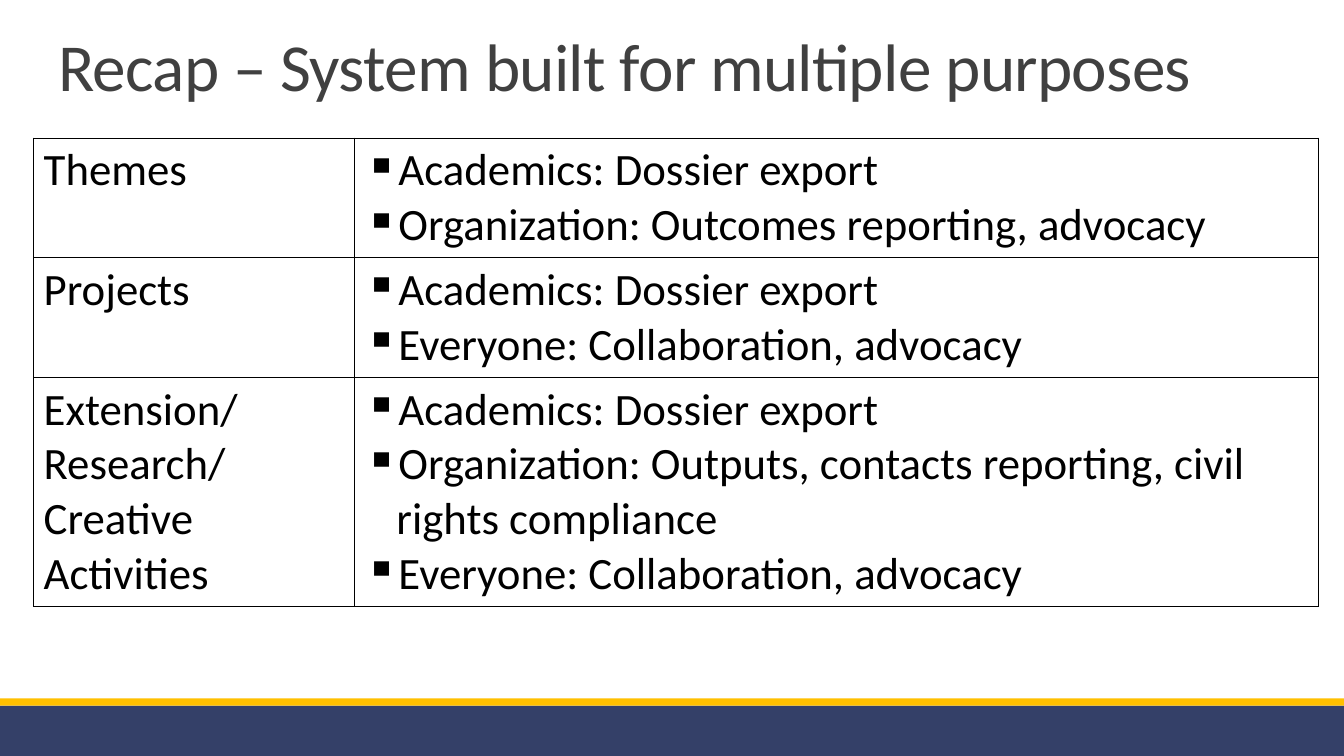
from lxml.etree import SubElement
from pptx import Presentation
from pptx.dml.color import RGBColor
from pptx.enum.shapes import MSO_SHAPE
from pptx.enum.text import MSO_ANCHOR
from pptx.oxml.ns import qn
from pptx.util import Pt

BLACK = RGBColor(0x00, 0x00, 0x00)
GREY = RGBColor(0x40, 0x40, 0x40)
NAVY = RGBColor(0x34, 0x40, 0x68)
GOLD = RGBColor(0xFF, 0xC0, 0x00)

PURPOSES = [
    ("Themes", ["Academics: Dossier export",
                "Organization: Outcomes reporting, advocacy"]),
    ("Projects", ["Academics: Dossier export",
                  "Everyone: Collaboration, advocacy"]),
    ("Extension/ Research/ Creative Activities",
     ["Academics: Dossier export",
      "Organization: Outputs, contacts reporting, civil rights compliance",
      "Everyone: Collaboration, advocacy"]),
]


class SlideBuilder:
    font_name = "Calibri"
    title_size = 48
    table_size = 32
    bullet_indent = 22.5

    def __init__(self, slide):
        self.slide = slide

    def set_font(self, paragraph, size, color):
        paragraph.font.name = self.font_name
        paragraph.font.size = Pt(size)
        paragraph.font.color.rgb = color

    def band(self, top, height, color):
        shape = self.slide.shapes.add_shape(
            MSO_SHAPE.RECTANGLE, Pt(0), Pt(top), Pt(960), Pt(height))
        shape.shadow.inherit = False
        shape.fill.solid()
        shape.fill.fore_color.rgb = color
        shape.line.fill.background()

    def title(self, text, left, top, width, height):
        frame = self.slide.shapes.add_textbox(
            Pt(left), Pt(top), Pt(width), Pt(height)).text_frame
        frame.word_wrap = True
        frame.vertical_anchor = MSO_ANCHOR.TOP
        paragraph = frame.paragraphs[0]
        paragraph.line_spacing = 0.85
        run = paragraph.add_run()
        run.text = text
        self.set_font(paragraph, self.title_size, GREY)
        # Letter spacing in hundredths of a point
        run.font._element.set("spc", "-50")

    def bullet(self, paragraph):
        properties = paragraph._p.get_or_add_pPr()
        indent = Pt(self.bullet_indent)
        properties.set("marL", str(indent))
        properties.set("indent", str(-indent))
        mark = SubElement(properties, qn("a:buChar"))
        mark.set("char", "▪")
        # The bullet goes before the default run properties
        properties.insert(0, mark)

    def cell(self, cell, lines, bulleted):
        frame = cell.text_frame
        frame.text = "\n".join(lines)
        for paragraph in frame.paragraphs:
            self.set_font(paragraph, self.table_size, BLACK)
            if bulleted:
                self.bullet(paragraph)
        # Borders come before the fill in the cell properties
        properties = cell._tc.get_or_add_tcPr()
        for side in ("a:lnL", "a:lnR", "a:lnT", "a:lnB"):
            border = SubElement(properties, qn(side), w=str(Pt(1)))
            fill = SubElement(border, qn("a:solidFill"))
            SubElement(fill, qn("a:srgbClr"), val=str(BLACK))
        cell.fill.background()

    def table(self, rows, left, top, column_widths, row_heights):
        table = self.slide.shapes.add_table(
            len(rows), len(column_widths), Pt(left), Pt(top),
            Pt(sum(column_widths)), Pt(sum(row_heights))).table
        table.first_row = False
        table.horz_banding = False
        for column, width in zip(table.columns, column_widths):
            column.width = Pt(width)
        for index, (label, bullets) in enumerate(rows):
            table.rows[index].height = Pt(row_heights[index])
            self.cell(table.cell(index, 0), [label], bulleted=False)
            self.cell(table.cell(index, 1), bullets, bulleted=True)


def main():
    presentation = Presentation()
    presentation.slide_width = Pt(960)
    presentation.slide_height = Pt(540)
    slide = presentation.slides.add_slide(presentation.slide_layouts[6])
    builder = SlideBuilder(slide)

    # Footer bands
    builder.band(504, 36, NAVY)
    builder.band(498.8, 5.2, GOLD)

    # Purposes table
    builder.table(PURPOSES, 24, 98.7, [229.5, 688.5], [85.2, 85.2, 163.4])

    # Title
    builder.title("Recap – System built for multiple purposes",
                  34.6, 22.3, 891.4, 114.5)

    presentation.save("out.pptx")


if __name__ == "__main__":
    main()
